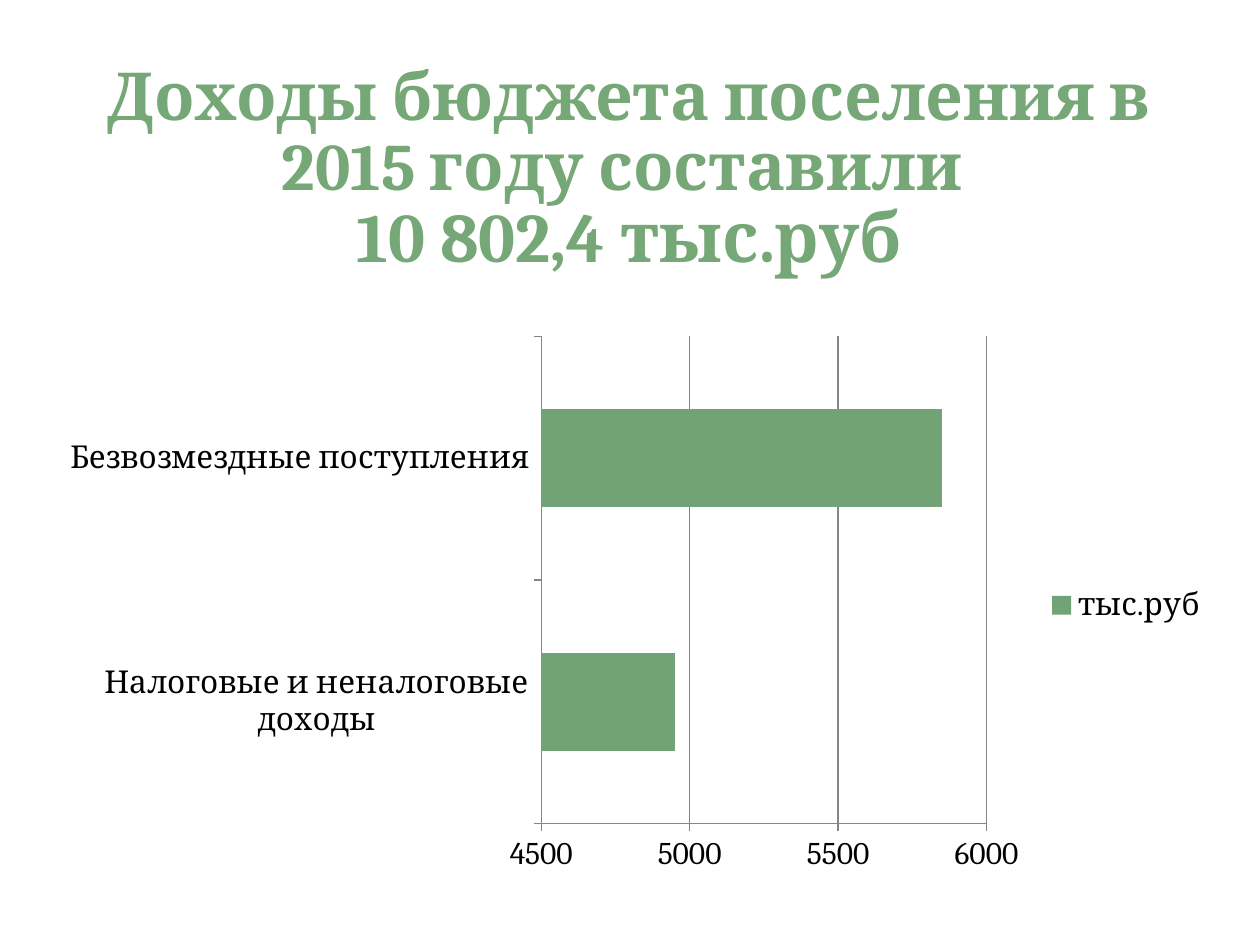
from lxml.etree import SubElement as Sub
from pptx import Presentation
from pptx.chart.data import CategoryChartData as Data
from pptx.dml.color import RGBColor as Rgb
from pptx.enum.chart import XL_CHART_TYPE as Kind, XL_LEGEND_POSITION as Side
from pptx.enum.chart import XL_TICK_MARK as Tick
from pptx.enum.text import MSO_ANCHOR as Anchor, MSO_AUTO_SIZE as Fit, PP_ALIGN as Align
from pptx.oxml.ns import qn
from pptx.util import Inches, Pt

HUES = {"title": "76A776", "bar": "72A376", "text": "000000", "grid": "868686"}
FONT = "Cambria"


def style(font, size, hue, bold=False):
    font.name, font.size, font.bold = FONT, Pt(size), bold
    font.color.rgb = Rgb.from_string(HUES[hue])


def write(para, text, size=18, hue="text", bold=False):
    run = para.add_run()
    run.text = text
    style(run.font, size, hue, bold)


class Page:
    def __init__(self, wide=10, high=7.5):
        self.deck = Presentation()
        self.wide, self.high = Inches(wide), Inches(high)
        self.deck.slide_width, self.deck.slide_height = self.wide, self.high
        self.slide = self.deck.slides.add_slide(self.deck.slide_layouts[5])

    def box(self, x, y, w, h):
        """Turn shares of the slide into lengths."""
        return (int(x * self.wide), int(y * self.high),
                int(w * self.wide), int(h * self.high))

    def title(self, lines, place):
        shape = self.slide.shapes.title
        shape.left, shape.top, shape.width, shape.height = self.box(*place)
        frame = shape.text_frame
        frame.word_wrap, frame.auto_size = True, Fit.NONE
        frame.vertical_anchor = Anchor.BOTTOM
        para = frame.paragraphs[0]
        para.alignment, para.line_spacing = Align.CENTER, 0.88
        for i, (text, size) in enumerate(lines):
            if i:
                para.add_line_break()
            write(para, text, size=size, hue="title", bold=True)

    def bars(self, name, rows, place, plot):
        data = Data()
        data.categories = list(rows)
        data.add_series(name, list(rows.values()))
        chart = self.slide.shapes.add_chart(
            Kind.BAR_STACKED, *self.box(*place), data).chart
        style(chart.font, 18, "text")
        chart.has_title = False

        # Bars
        group = chart.plots[0]
        group.gap_width, group.overlap = 150, 100
        group.vary_by_categories = False
        fill = group.series[0].format.fill
        fill.solid()
        fill.fore_color.rgb = Rgb.from_string(HUES["bar"])

        # Axes and grid
        axis = chart.value_axis
        axis.minimum_scale, axis.maximum_scale, axis.major_unit = 4500, 6000, 500
        axis.has_major_gridlines = True
        for part in (axis, chart.category_axis):
            part.major_tick_mark, part.minor_tick_mark = Tick.OUTSIDE, Tick.NONE
        for part in (axis, chart.category_axis, axis.major_gridlines):
            part.format.line.width = Pt(0.75)
            part.format.line.color.rgb = Rgb.from_string(HUES["grid"])

        # Legend
        chart.has_legend = True
        chart.legend.position = Side.RIGHT
        chart.legend.include_in_layout = False

        # Plot area, in shares of the chart
        area = chart._chartSpace.chart.plotArea
        for old in area.findall(qn("c:layout")):
            area.remove(old)
        layout = Sub(area, qn("c:layout"))
        area.insert(0, layout)
        manual = Sub(layout, qn("c:manualLayout"))
        pairs = [("layoutTarget", "inner"), ("xMode", "edge"), ("yMode", "edge")]
        for tag, val in pairs + list(zip("xywh", plot)):
            Sub(manual, qn("c:" + tag)).set("val", str(val))


def main():
    page = Page()
    page.title([("Доходы бюджета поселения в 2015 году составили ", 37.8),
                ("10 802,4 тыс.руб", 39.6)], (0.023, 0.03, 0.953, 0.27))
    page.bars("тыс.руб",
              {"Налоговые и неналоговые доходы": 4950,
               "Безвозмездные поступления": 5850},
              (0.039, 0.344, 0.93, 0.593), (0.42, 0.02, 0.38, 0.87))
    page.deck.save("out.pptx")


if __name__ == "__main__":
    main()
